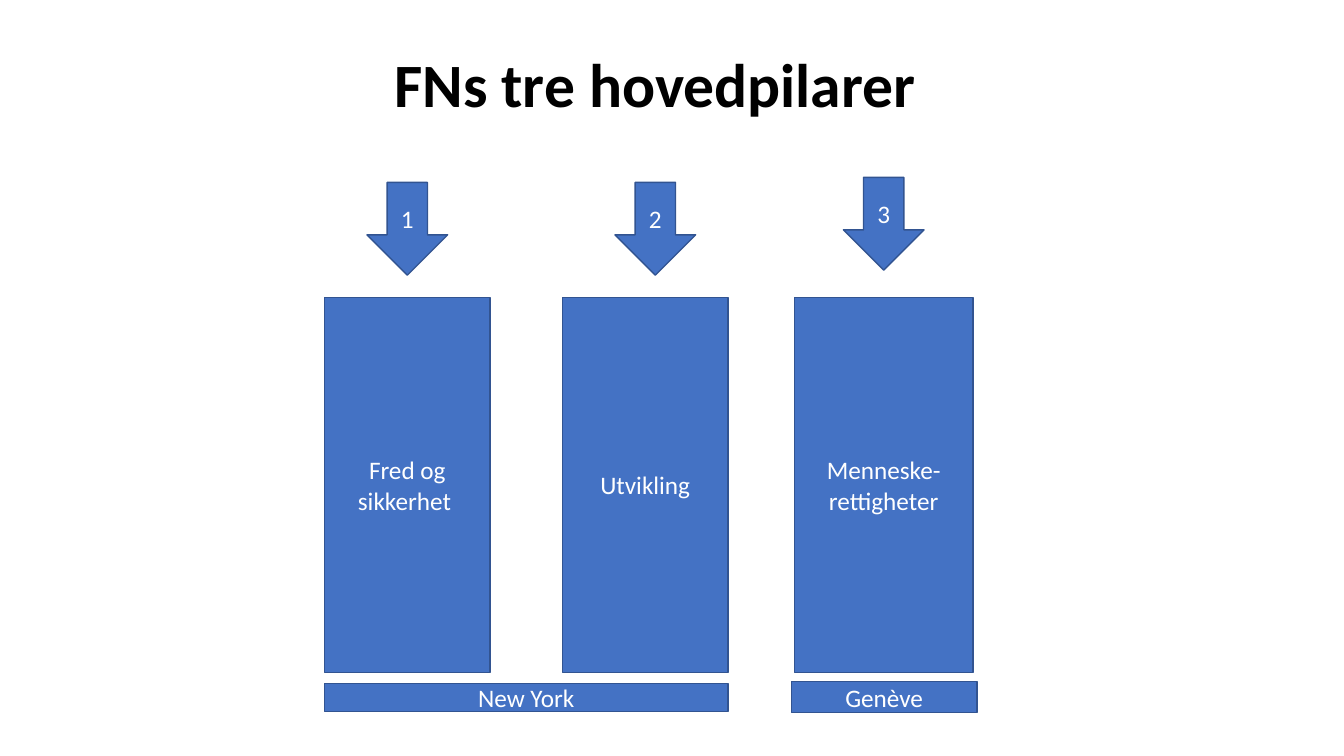
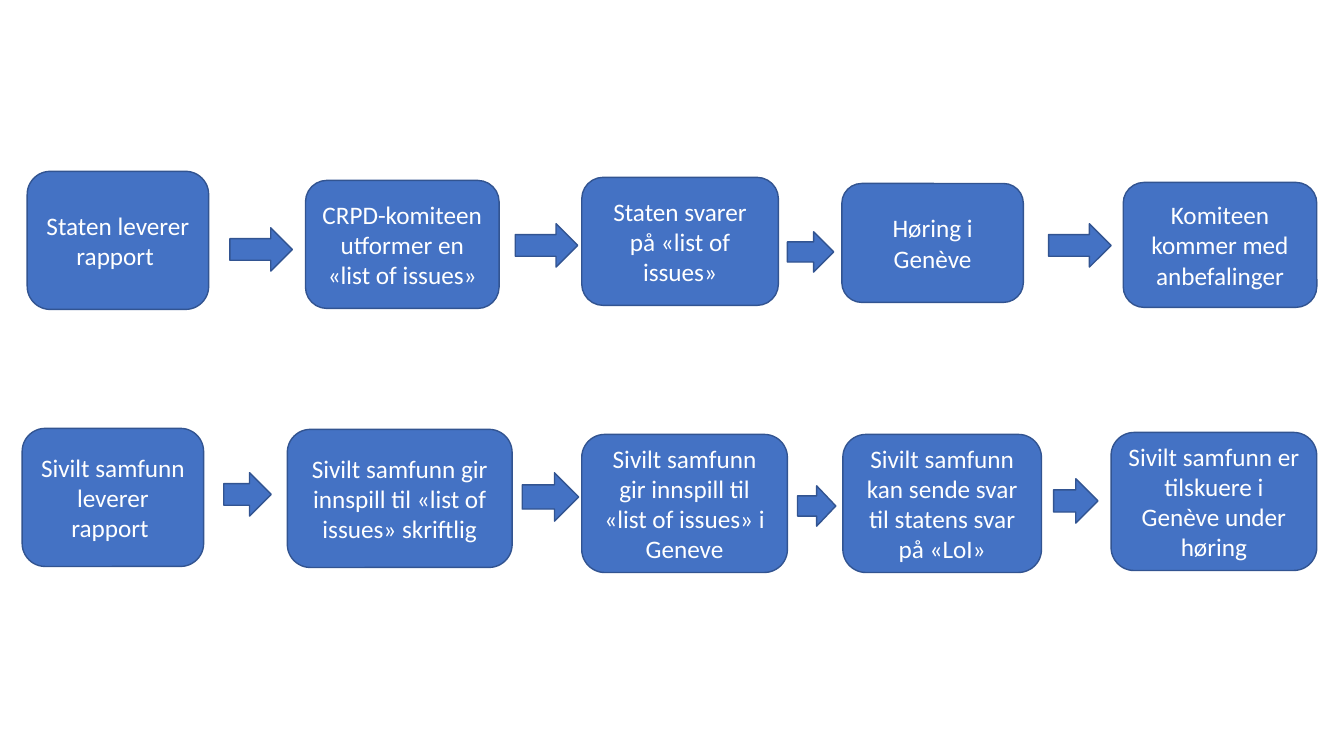
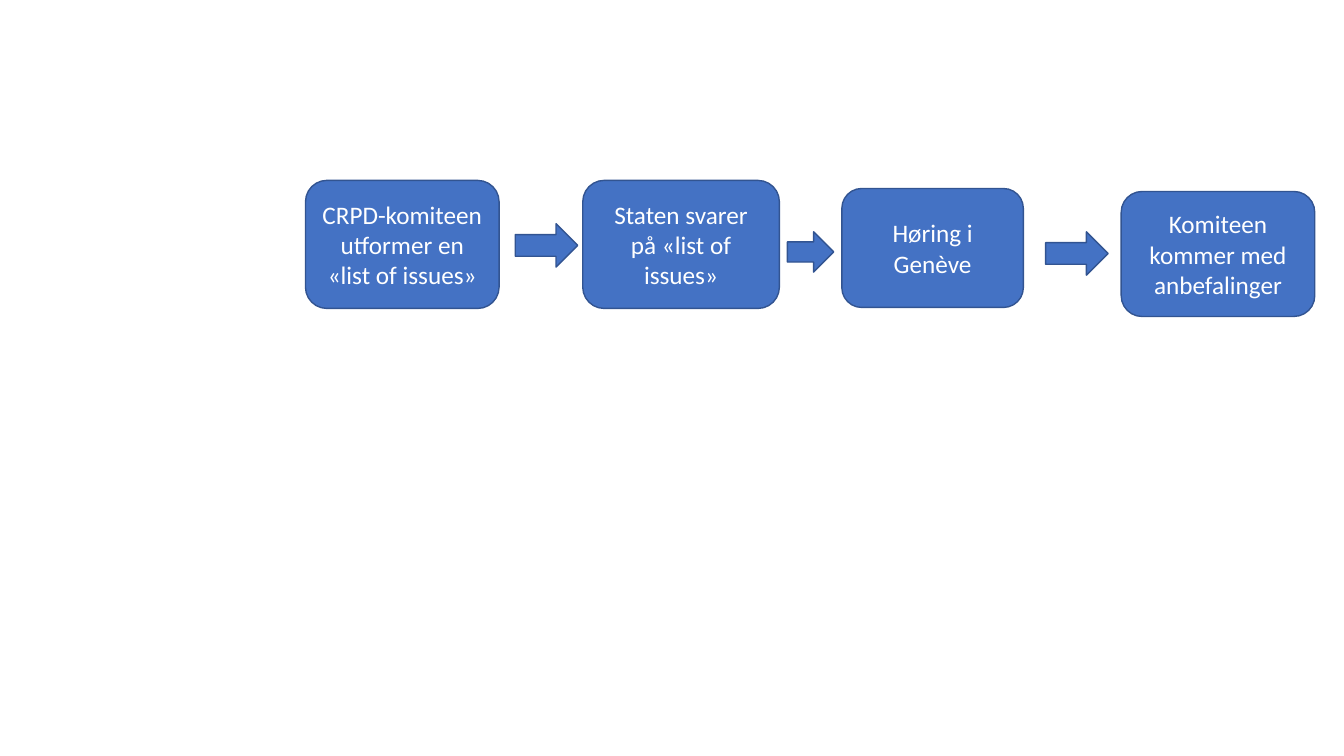
from pptx import Presentation
from pptx.dml.color import RGBColor
from pptx.enum.shapes import MSO_SHAPE
from pptx.enum.text import MSO_ANCHOR, PP_ALIGN
from pptx.util import Inches, Pt

BLUE = RGBColor(0x44, 0x72, 0xC4)
EDGE = RGBColor(0x32, 0x54, 0x91)
WHITE = RGBColor(0xFF, 0xFF, 0xFF)
BLACK = RGBColor(0x00, 0x00, 0x00)
FONT = "Calibri"
RECT = MSO_SHAPE.RECTANGLE
ROUND = MSO_SHAPE.ROUNDED_RECTANGLE
DOWN = MSO_SHAPE.DOWN_ARROW
RIGHT = MSO_SHAPE.RIGHT_ARROW
CENTER = PP_ALIGN.CENTER
MIDDLE = MSO_ANCHOR.MIDDLE
TITLE_ONLY, BLANK = 5, 6

# Each step: text, width, height
STATE = [
    ("Staten leverer rapport ", 1.8, 1.37),
    ("CRPD-komiteen utformer en «list of issues»", 1.92, 1.27),
    ("Staten svarer på «list of issues»", 1.95, 1.27),
    ("Høring i Genève", 1.8, 1.18),
    ("Komiteen kommer med anbefalinger", 1.92, 1.24),
]
CIVIL = [
    ("Sivilt samfunn leverer rapport ", 1.8, 1.37),
    ("Sivilt samfunn gir innspill til «list of issues» skriftlig", 2.23, 1.37),
    ("Sivilt samfunn gir innspill til «list of issues» i Geneve", 2.04, 1.37),
    ("Sivilt samfunn kan sende svar til statens svar på «LoI»", 1.97, 1.37),
    ("Sivilt samfunn er tilskuere i Genève under høring", 2.04, 1.37),
]
LONG = (0.62, 0.43)
SHORT = (0.46, 0.4)


def style(frame, size, color, bold=False):
    """Centre the text both ways and set its font."""
    frame.word_wrap = True
    frame.vertical_anchor = MIDDLE
    for para in frame.paragraphs:
        para.alignment = CENTER
        for run in para.runs:
            font = run.font
            font.name, font.size, font.bold = FONT, Pt(size), bold
            font.color.rgb = color


def add_block(slide, kind, left, top, width, height, text=""):
    block = slide.shapes.add_shape(
        kind, Inches(left), Inches(top), Inches(width), Inches(height))
    block.shadow.inherit = False
    block.fill.solid()
    block.fill.fore_color.rgb = BLUE
    block.line.color.rgb = EDGE
    block.line.width = Pt(1)
    if text:
        block.text_frame.text = text
        style(block.text_frame, 18, WHITE)


def add_title(slide, text):
    title = slide.shapes.title
    title.left, title.top = Inches(0.75), Inches(0.14)
    title.width, title.height = Inches(11.5), Inches(1.45)
    title.text_frame.text = text
    title.text_frame.paragraphs[0].line_spacing = 0.9
    style(title.text_frame, 44, BLACK, bold=True)


def add_pillar(slide, left, top, width, number, text, shift=0, lift=0):
    """Place a numbered arrow over a pillar; shift and lift move the arrow."""
    wide, high = 0.8, 0.92
    add_block(slide, DOWN, left + (width - wide) / 2 + shift,
              top - 1.14 - lift, wide, high, str(number))
    add_block(slide, RECT, left, top, width, 3.72, text)


def add_pillars(slide, left, top):
    """Place three pillars on their two bases."""
    add_pillar(slide, left, top, 1.64, 1, "Fred og sikkerhet ")
    add_pillar(slide, left + 2.36, top, 1.64, 2, "Utvikling", shift=0.1)
    add_pillar(slide, left + 4.66, top, 1.77, 3, "Menneske-rettigheter",
               lift=0.05)
    add_block(slide, RECT, left, top + 3.83, 4, 0.28, "New York")
    add_block(slide, RECT, left + 4.63, top + 3.81, 1.84, 0.31, "Genève")


def add_flow(slide, left, top, steps, spots, arrows):
    """Place steps at their spots, with arrows given as (x, y, size)."""
    for (text, width, height), (x, y) in zip(steps, spots):
        add_block(slide, ROUND, left + x, top + y, width, height, text)
    for x, y, size in arrows:
        add_block(slide, RIGHT, left + x, top + y, *size)


def main():
    deck = Presentation()
    deck.slide_width, deck.slide_height = Inches(13.33), Inches(7.5)

    slide = deck.slides.add_slide(deck.slide_layouts[TITLE_ONLY])
    add_title(slide, "FNs tre hovedpilarer")
    add_pillars(slide, 3.22, 2.95)

    slide = deck.slides.add_slide(deck.slide_layouts[BLANK])
    add_flow(slide, 0.27, 1.7, STATE,
             [(0, 0), (2.76, 0.09), (5.5, 0.06), (8.08, 0.12), (10.87, 0.11)],
             [(2.01, 0.56, LONG), (4.84, 0.52, LONG),
              (7.54, 0.6, SHORT), (10.13, 0.52, LONG)])
    add_flow(slide, 0.22, 4.25, CIVIL,
             [(0, 0), (2.63, 0.01), (5.55, 0.06), (8.14, 0.06), (10.8, 0.04)],
             [(2, 0.44, (0.47, 0.43)), (4.96, 0.44, (0.56, 0.48)),
              (7.69, 0.57, (0.38, 0.4)), (10.23, 0.5, (0.44, 0.44))])

    slide = deck.slides.add_slide(deck.slide_layouts[BLANK])
    add_flow(slide, 3.03, 1.79, STATE[1:],
             [(0, 0), (2.75, 0), (5.32, 0.08), (8.09, 0.11)],
             [(2.08, 0.43, LONG), (4.78, 0.51, SHORT), (7.34, 0.51, LONG)])

    deck.save("out.pptx")


if __name__ == "__main__":
    main()
